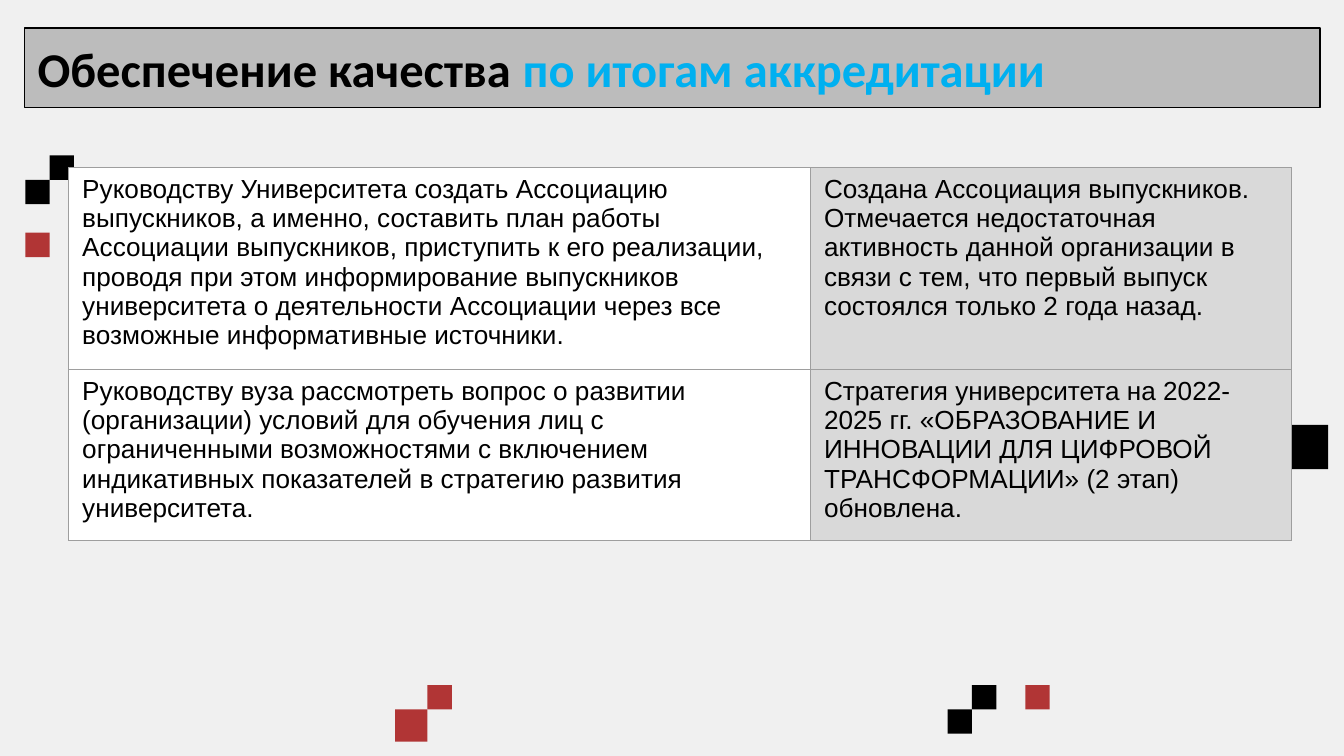
"""Build a slide on quality assurance after accreditation."""
import pptx
import pptx.util
import pptx.dml.color
import pptx.enum.shapes
import pptx.enum.text
import pptx.oxml
import pptx.oxml.ns

Cm, Pt = pptx.util.Cm, pptx.util.Pt
RGBColor = pptx.dml.color.RGBColor
RECT = pptx.enum.shapes.MSO_SHAPE.RECTANGLE

BACK = RGBColor(0xF0, 0xF0, 0xF0)
BLACK = RGBColor(0, 0, 0)
RED = RGBColor(0xB1, 0x35, 0x35)
BLUE = RGBColor(0x00, 0xB0, 0xF0)
GREY = RGBColor(0xBC, 0xBC, 0xBC)
WHITE = RGBColor(0xFF, 0xFF, 0xFF)
PALE = RGBColor(0xD9, 0xD9, 0xD9)
EDGE = RGBColor(0x9E, 0x9E, 0x9E)

SQUARES = [
    (8.08, 12.95, 0.46, RED), (7.47, 13.41, 0.61, RED),
    (17.91, 13.41, 0.46, BLACK), (18.37, 12.95, 0.46, BLACK),
    (19.38, 12.95, 0.46, RED), (24.26, 8.03, 0.84, BLACK),
    (0.94, 2.94, 0.46, BLACK), (0.48, 3.4, 0.46, BLACK),
    (0.48, 4.4, 0.46, RED),
]
TITLE = [("Обеспечение качества ", BLACK), ("по итогам аккредитации", BLUE)]
ROWS = [
    ("Руководству Университета создать Ассоциацию выпускников, а именно, "
     "составить план работы Ассоциации выпускников, приступить к его реализации, "
     "проводя при этом информирование выпускников университета о деятельности "
     "Ассоциации через все возможные информативные источники.",
     "Создана Ассоциация выпускников.\n"
     "Отмечается недостаточная активность данной организации в связи с тем, "
     "что первый выпуск состоялся только 2 года назад."),
    ("Руководству вуза рассмотреть вопрос о развитии (организации) условий для "
     "обучения лиц с ограниченными возможностями с включением индикативных "
     "показателей в стратегию развития университета.",
     "Стратегия университета на 2022-2025 гг. «ОБРАЗОВАНИЕ И ИННОВАЦИИ ДЛЯ "
     "ЦИФРОВОЙ ТРАНСФОРМАЦИИ» (2 этап) обновлена."),
]
WIDTHS = [14.02, 9.09]
HEIGHTS = [3.82, 3.22]


def add_box(left, top, width, height, color):
    box = slide.shapes.add_shape(RECT, Cm(left), Cm(top), Cm(width), Cm(height))
    box.shadow.inherit = False
    box.fill.solid()
    box.fill.fore_color.rgb = color
    box.line.fill.background()
    return box


def set_edges(cell):
    props = cell._tc.get_or_add_tcPr()
    for spot, side in enumerate(("lnL", "lnR", "lnT", "lnB")):
        props.insert(spot, pptx.oxml.parse_xml(
            f'<a:{side} {pptx.oxml.ns.nsdecls("a")} w="{Pt(0.75)}">'
            f'<a:solidFill><a:srgbClr val="{EDGE}"/></a:solidFill></a:{side}>'))


deck = pptx.Presentation()
deck.slide_width, deck.slide_height = Cm(25.4), Cm(14.29)
slide = deck.slides.add_slide(deck.slide_layouts[6])
slide.background.fill.solid()
slide.background.fill.fore_color.rgb = BACK

for left, top, size, color in SQUARES:
    add_box(left, top, size, size, color)

title = add_box(0.46, 0.53, 24.49, 1.5, GREY)
title.line.color.rgb = BLACK
title.line.width = Pt(0.75)
frame = title.text_frame
frame.word_wrap = True
frame.vertical_anchor = pptx.enum.text.MSO_ANCHOR.MIDDLE
frame.margin_left = frame.margin_right = Cm(0.25)
frame.margin_top = frame.margin_bottom = Cm(0.25)
para = frame.paragraphs[0]
para.alignment = pptx.enum.text.PP_ALIGN.LEFT
for text, color in TITLE:
    run = para.add_run()
    run.text = text
    run.font.name = "Calibri"
    run.font.size = Pt(26)
    run.font.bold = True
    run.font.color.rgb = color

table = slide.shapes.add_table(
    len(ROWS), len(WIDTHS), Cm(1.3), Cm(3.17),
    Cm(sum(WIDTHS)), Cm(sum(HEIGHTS))).table
table.first_row = table.horz_banding = False
for col, width in zip(table.columns, WIDTHS):
    col.width = Cm(width)
for row, height, texts in zip(table.rows, HEIGHTS, ROWS):
    row.height = Cm(height)
    for cell, text, color in zip(row.cells, texts, (WHITE, PALE)):
        cell.fill.solid()
        cell.fill.fore_color.rgb = color
        set_edges(cell)
        cell.text_frame.text = text
        for para in cell.text_frame.paragraphs:
            for run in para.runs:
                run.font.name = "Arial"
                run.font.size = Pt(14)
                run.font.color.rgb = BLACK

deck.save("out.pptx")
